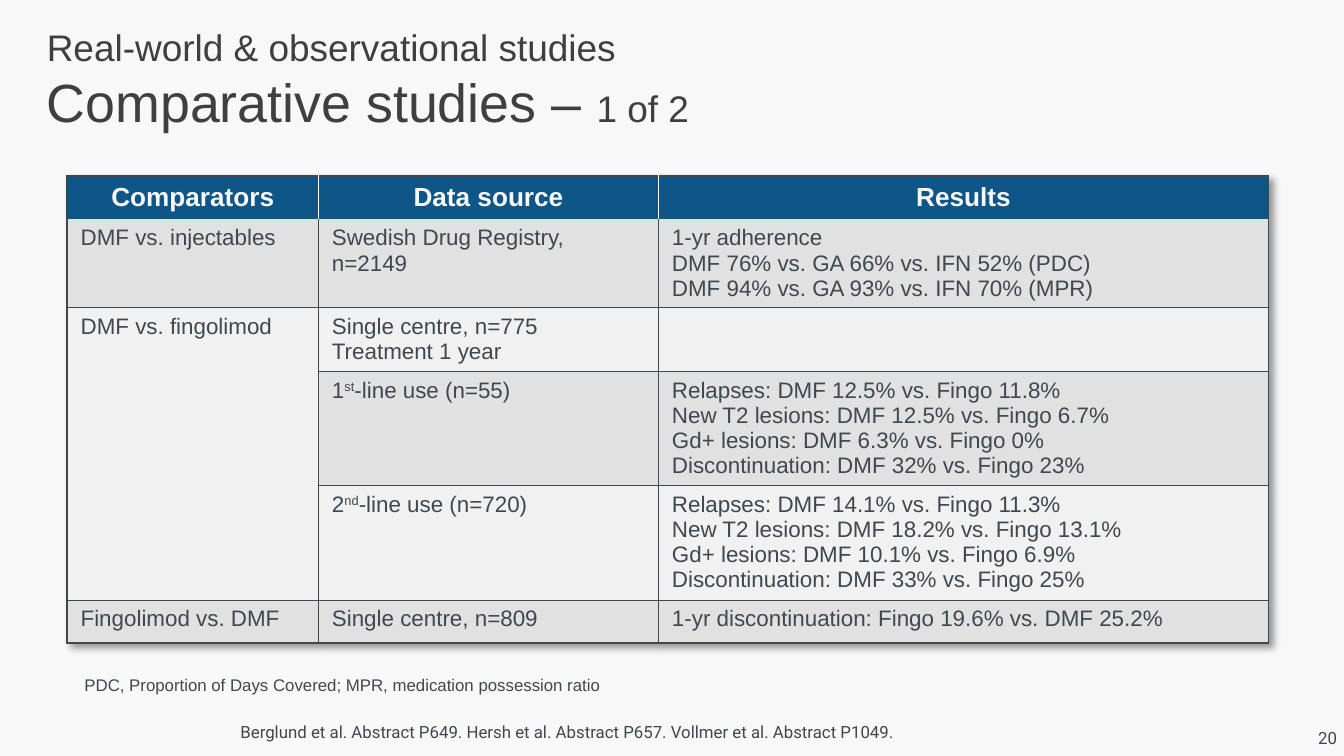
from pptx import Presentation
from pptx import util as u
from pptx.dml.color import RGBColor
from pptx.enum import text
from pptx.oxml import parse_xml
from pptx.oxml.ns import nsdecls, qn

COLORS = {
    "background": "F8F8F8",
    "title": "3F3F3F",
    "body": "3F4751",
    "header": "0E5588",
    "odd": "E1E1E2",
    "even": "F1F1F1",
}
NO_STYLE = "{2D5ABB26-0587-4C30-8999-92F81FD0307C}"
COLUMN_WIDTHS = [1.87, 2.53, 4.54]
ROW_HEIGHTS = [0.31, 0.66, 0.47, 0.85, 0.85, 0.32]
ROWS = [
    ["Comparators", "Data source", "Results"],
    ["DMF vs. injectables", "Swedish Drug Registry, n=2149",
     "1-yr adherence\nDMF 76% vs. GA 66% vs. IFN 52% (PDC)\n"
     "DMF 94% vs. GA 93% vs. IFN 70% (MPR)"],
    ["DMF vs. fingolimod", "Single centre, n=775\nTreatment 1 year", ""],
    ["", "1^st^-line use (n=55)",
     "Relapses: DMF 12.5% vs. Fingo 11.8%\nNew T2 lesions: DMF 12.5% vs. Fingo 6.7%\n"
     "Gd+ lesions: DMF 6.3% vs. Fingo 0%\nDiscontinuation: DMF 32% vs. Fingo 23%"],
    ["", "2^nd^-line use (n=720)",
     "Relapses: DMF 14.1% vs. Fingo 11.3%\nNew T2 lesions: DMF 18.2% vs. Fingo 13.1%\n"
     "Gd+ lesions: DMF 10.1% vs. Fingo 6.9%\nDiscontinuation: DMF 33% vs. Fingo 25%"],
    ["Fingolimod vs. DMF", "Single centre, n=809",
     "1-yr discontinuation: Fingo 19.6% vs. DMF 25.2%"],
]


class SlideBuilder:
    """Hold the style and the current slide, and add elements to it."""

    def __init__(self, presentation, colors):
        self.colors = colors
        self.slide = presentation.slides.add_slide(presentation.slide_layouts[6])
        self.fill(self.slide.background, "background")

    def fill(self, target, color):
        target.fill.solid()
        target.fill.fore_color.rgb = RGBColor.from_string(self.colors[color])

    def style(self, font, size, color, name="Arial", bold=False):
        font.size = u.Pt(size)
        font.name = name
        font.bold = bold
        font.color.rgb = RGBColor.from_string(self.colors[color])

    def text_box(self, left, top, width, height, anchor, bottom=0.05):
        shape = self.slide.shapes.add_textbox(*map(u.Inches, (left, top, width, height)))
        frame = shape.text_frame
        frame.word_wrap = True
        frame.vertical_anchor = anchor
        frame.margin_bottom = u.Inches(bottom)
        return frame

    def title(self, overline, heading, counter):
        frame = self.text_box(0.25, 0.12, 9.5, 0.94, text.MSO_ANCHOR.MIDDLE)
        paragraph = frame.paragraphs[0]
        for content, size in ((overline, 19.8), (heading, 28.8), (counter, 19.8)):
            run = paragraph.add_run()
            run.text = content
            self.style(run.font, size, "title")
            if content == overline:
                paragraph.add_line_break()

    def note(self, content, box, font="Roboto", anchor=text.MSO_ANCHOR.TOP, bottom=0.05):
        frame = self.text_box(*box, anchor, bottom)
        frame.text = content
        self.style(frame.paragraphs[0].runs[0].font, 9, "body", font)

    def cell_text(self, cell, content, header):
        for index, line in enumerate(content.split("\n")):
            frame = cell.text_frame
            paragraph = frame.add_paragraph() if index else frame.paragraphs[0]
            paragraph.alignment = text.PP_ALIGN.CENTER if header else text.PP_ALIGN.LEFT
            self.style(paragraph.font, 12, "body")
            for position, part in enumerate(line.split("^")):
                if not part:
                    continue
                run = paragraph.add_run()
                run.text = part
                self.style(run.font, 14 if header else 12,
                           "background" if header else "body", bold=header)
                if position % 2:
                    run.font._element.set("baseline", "30000")

    def borders(self, cell, lines):
        properties = cell._tc.get_or_add_tcPr()
        for index, (side, (color, width)) in enumerate(lines.items()):
            properties.insert(index, parse_xml(
                f'<a:ln{side} {nsdecls("a")} w="{u.Pt(width)}"><a:solidFill>'
                f'<a:srgbClr val="{self.colors[color]}"/></a:solidFill></a:ln{side}>'))

    def table(self, left, top, rows, widths, heights):
        frame = self.slide.shapes.add_table(
            len(rows), len(widths), u.Inches(left), u.Inches(top),
            u.Inches(sum(widths)), u.Inches(sum(heights)))
        table = frame.table
        properties = table._tbl.tblPr
        properties.find(qn("a:tableStyleId")).text = NO_STYLE
        properties.insert(0, parse_xml(
            f'<a:effectLst {nsdecls("a")}><a:outerShdw blurRad="50800" dist="38100" dir="2700000">'
            '<a:srgbClr val="000000"><a:alpha val="40000"/></a:srgbClr></a:outerShdw></a:effectLst>'))
        for column, width in zip(table.columns, widths):
            column.width = u.Inches(width)
        last_row, last_column = len(rows) - 1, len(widths) - 1
        for r, (row, height) in enumerate(zip(rows, heights)):
            table.rows[r].height = u.Inches(height)
            header = r == 0
            inner = ("background" if header else "body", 0.25)
            outer = ("body", 1)
            for c, content in enumerate(row):
                cell = table.cell(r, c)
                merged = c == 0 and 2 <= r <= 4
                self.fill(cell, "header" if header else "odd" if r % 2 and not merged else "even")
                self.cell_text(cell, content, header)
                if header:
                    cell.vertical_anchor = text.MSO_ANCHOR.MIDDLE
                lines = {"L": outer if c == 0 else inner, "R": outer if c == last_column else inner}
                if r != 1:
                    lines["T"] = outer if header else inner
                if not header:
                    lines["B"] = outer if r == last_row else inner
                self.borders(cell, lines)
        table.cell(2, 0).merge(table.cell(4, 0))


def main():
    presentation = Presentation()
    presentation.slide_width = u.Inches(10)
    presentation.slide_height = u.Inches(10 * 9 / 16)
    builder = SlideBuilder(presentation, COLORS)
    builder.table(0.5, 1.31, ROWS, COLUMN_WIDTHS, ROW_HEIGHTS)
    builder.title("Real-world & observational studies", "Comparative studies – ", "1 of 2")
    builder.note("20", (9.71, 5.35, 0.8, 0.23), anchor=text.MSO_ANCHOR.MIDDLE, bottom=0)
    builder.note("Berglund et al. Abstract P649. Hersh et al. Abstract P657. Vollmer et al. Abstract P1049.",
                 (1.69, 5.32, 6.58, 0.25), anchor=text.MSO_ANCHOR.BOTTOM)
    builder.note("PDC, Proportion of Days Covered; MPR, medication possession ratio",
                 (0.53, 4.97, 7.84, 0.25), font="Arial")
    presentation.save("out.pptx")


if __name__ == "__main__":
    main()
